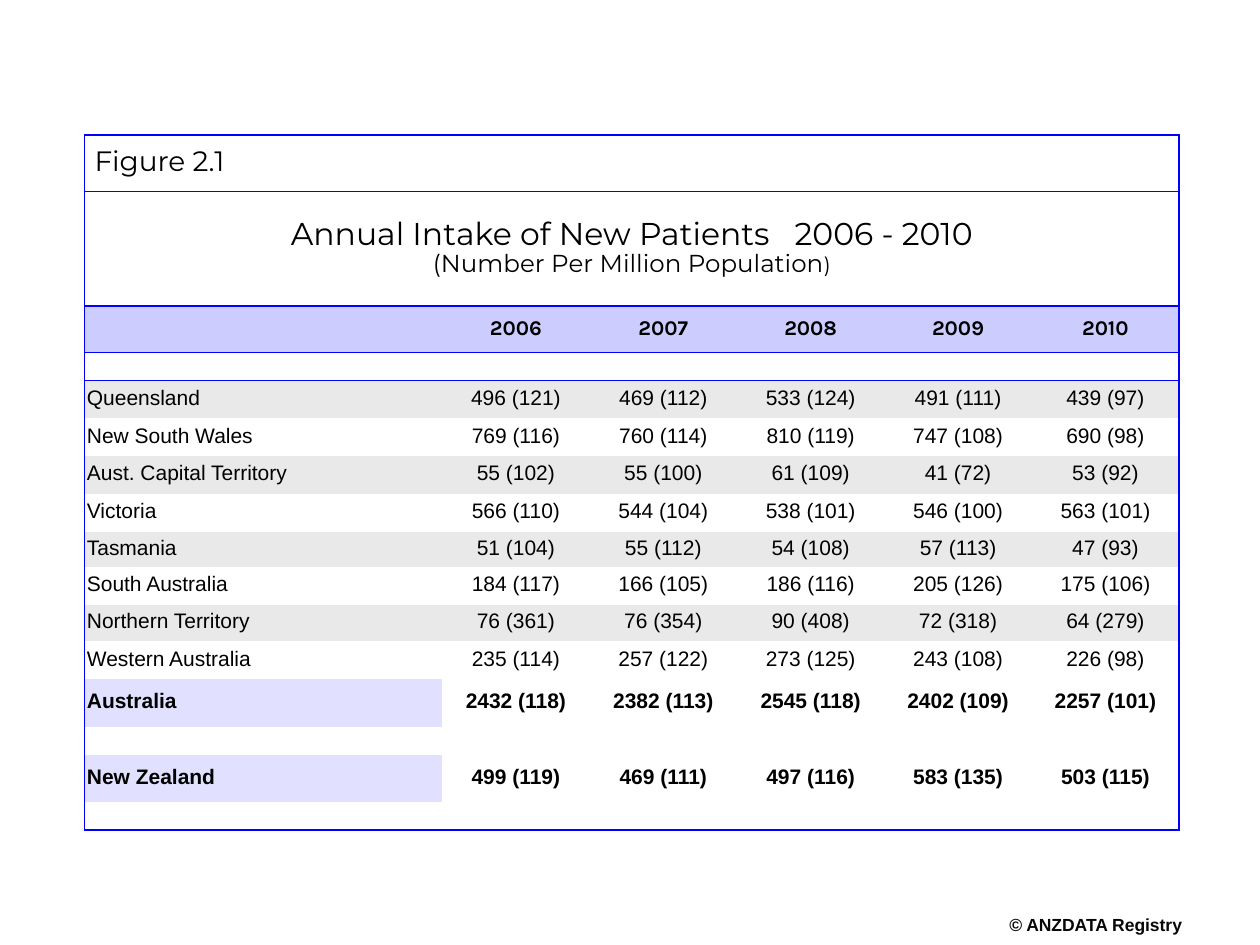
from lxml import etree
from pptx import Presentation
from pptx.dml.color import RGBColor
from pptx.enum.text import MSO_ANCHOR, PP_ALIGN
from pptx.oxml.ns import qn
from pptx.util import Inches, Pt

BLUE = RGBColor(0x00, 0x00, 0xFF)
HEADER = RGBColor(0xCC, 0xCC, 0xFF)
BAND = RGBColor(0xE9, 0xE9, 0xE9)
TOTAL = RGBColor(0xE1, 0xE1, 0xFF)
BLACK = RGBColor(0x00, 0x00, 0x00)
CREDIT = RGBColor(0x08, 0x08, 0x08)
LEFT, CENTER = PP_ALIGN.LEFT, PP_ALIGN.CENTER
MIDDLE = MSO_ANCHOR.MIDDLE
NO_STYLE = "{2D5ABB26-0587-4C30-8999-92F81FD0307C}"

HEADER_ROW, FIRST_REGION, LAST_REGION = 2, 4, 11
TOTAL_ROWS = (12, 14)
MERGED_ROWS = (0, 1, 13, 15)
COL_WIDTHS = [2.84] + [1.17] * 5
ROW_HEIGHTS = [0.45, 0.91, 0.37, 0.22, 0.3, 0.3, 0.3, 0.3,
               0.28, 0.3, 0.29, 0.3, 0.38, 0.22, 0.38, 0.22]
ROWS = {
    2: ["", "2006", "2007", "2008", "2009", "2010"],
    4: ["Queensland", "496 (121)", "469 (112)", "533 (124)", "491 (111)", "439 (97)"],
    5: ["New South Wales", "769 (116)", "760 (114)", "810 (119)", "747 (108)", "690 (98)"],
    6: ["Aust. Capital Territory", "55 (102)", "55 (100)", "61 (109)", "41 (72)", "53 (92)"],
    7: ["Victoria", "566 (110)", "544 (104)", "538 (101)", "546 (100)", "563 (101)"],
    8: ["Tasmania", "51 (104)", "55 (112)", "54 (108)", "57 (113)", "47 (93)"],
    9: ["South Australia", "184 (117)", "166 (105)", "186 (116)", "205 (126)", "175 (106)"],
    10: ["Northern Territory", "76 (361)", "76 (354)", "90 (408)", "72 (318)", "64 (279)"],
    11: ["Western Australia", "235 (114)", "257 (122)", "273 (125)", "243 (108)", "226 (98)"],
    12: ["Australia", "2432 (118)", "2382 (113)", "2545 (118)", "2402 (109)", "2257 (101)"],
    14: ["New Zealand", "499 (119)", "469 (111)", "497 (116)", "583 (135)", "503 (115)"],
}
TITLE = [
    [("Annual Intake of New Patients", 18), (" ", 18), ("2006 - 2010", 18)],
    [("(Number Per Million Population", 14), (")", 12)],
]


def add_run(p, text, size, font, bold=False, color=BLACK):
    r = p.add_run()
    r.text = text
    r.font.size = Pt(size)
    r.font.name = font
    r.font.bold = bold
    r.font.color.rgb = color
    return r


def add_border(cell, side):
    ln = etree.SubElement(cell._tc.get_or_add_tcPr(), qn(f"a:ln{side}"), w=str(Pt(1)))
    fill = etree.SubElement(ln, qn("a:solidFill"))
    etree.SubElement(fill, qn("a:srgbClr"), val=str(BLUE))


prs = Presentation()
prs.slide_width, prs.slide_height = Inches(10), Inches(7.5)
s = prs.slides.add_slide(prs.slide_layouts[6])

tb = s.shapes.add_textbox(Inches(7.99), Inches(7.28), Inches(1.41), Inches(0.17))
tf = tb.text_frame
tf.word_wrap = False
tf.margin_left = tf.margin_right = tf.margin_top = tf.margin_bottom = 0
p = tf.paragraphs[0]
p.alignment = CENTER
p.line_spacing = 0.85
add_run(p, "© ANZDATA Registry", 10, "Arial", True, CREDIT)

n_rows, n_cols = len(ROW_HEIGHTS), len(COL_WIDTHS)
table = s.shapes.add_table(n_rows, n_cols, Inches(0.67), Inches(1.07),
                           Inches(8.66), Inches(5.51)).table
table.first_row = table.horz_banding = False
table._tbl.tblPr.find(qn("a:tableStyleId")).text = NO_STYLE
for col, width in zip(table.columns, COL_WIDTHS):
    col.width = Inches(width)
for row, height in zip(table.rows, ROW_HEIGHTS):
    row.height = Inches(height)
for i in MERGED_ROWS:
    table.cell(i, 0).merge(table.cell(i, n_cols - 1))

for i in range(n_rows):
    for j in range(n_cols):
        cell = table.cell(i, j)
        cell.vertical_anchor = MIDDLE
        cell.margin_left = cell.margin_right = Inches(0.02)
        cell.margin_top = cell.margin_bottom = Inches(0.02)
        if j == 0:
            add_border(cell, "L")
        if j == n_cols - 1 or (j == 0 and i in MERGED_ROWS):
            add_border(cell, "R")
        if i <= HEADER_ROW + 1:
            add_border(cell, "T")
        if i <= HEADER_ROW or i == n_rows - 1:
            add_border(cell, "B")

        fill = None
        if i == HEADER_ROW:
            fill = HEADER
        elif FIRST_REGION <= i <= LAST_REGION and i % 2 == 0:
            fill = BAND
        elif i in TOTAL_ROWS and j == 0:
            fill = TOTAL
        if fill is None:
            cell.fill.background()
        else:
            cell.fill.solid()
            cell.fill.fore_color.rgb = fill

        p = cell.text_frame.paragraphs[0]
        p.alignment = CENTER if j else LEFT
        p.line_spacing = 0.85
        text = ROWS[i][j] if i in ROWS else ""
        if text:
            font = "Karla" if i == HEADER_ROW else "Arial"
            add_run(p, text, 12, font, i == HEADER_ROW or i in TOTAL_ROWS)
        elif i > 1 or j:
            etree.SubElement(p._p, qn("a:endParaRPr"), sz="1000")

cell = table.cell(0, 0)
cell.margin_left = Inches(0.08)
add_run(cell.text_frame.paragraphs[0], "Figure 2.1", 16, "Montserrat")

tf = table.cell(1, 0).text_frame
for k, line in enumerate(TITLE):
    p = tf.add_paragraph() if k else tf.paragraphs[0]
    p.alignment = CENTER
    p.line_spacing = 0.85
    for text, size in line:
        r = add_run(p, text, size, "Montserrat")
        if text == " ":
            r.font._element.set("spc", "950")

prs.save("out.pptx")
